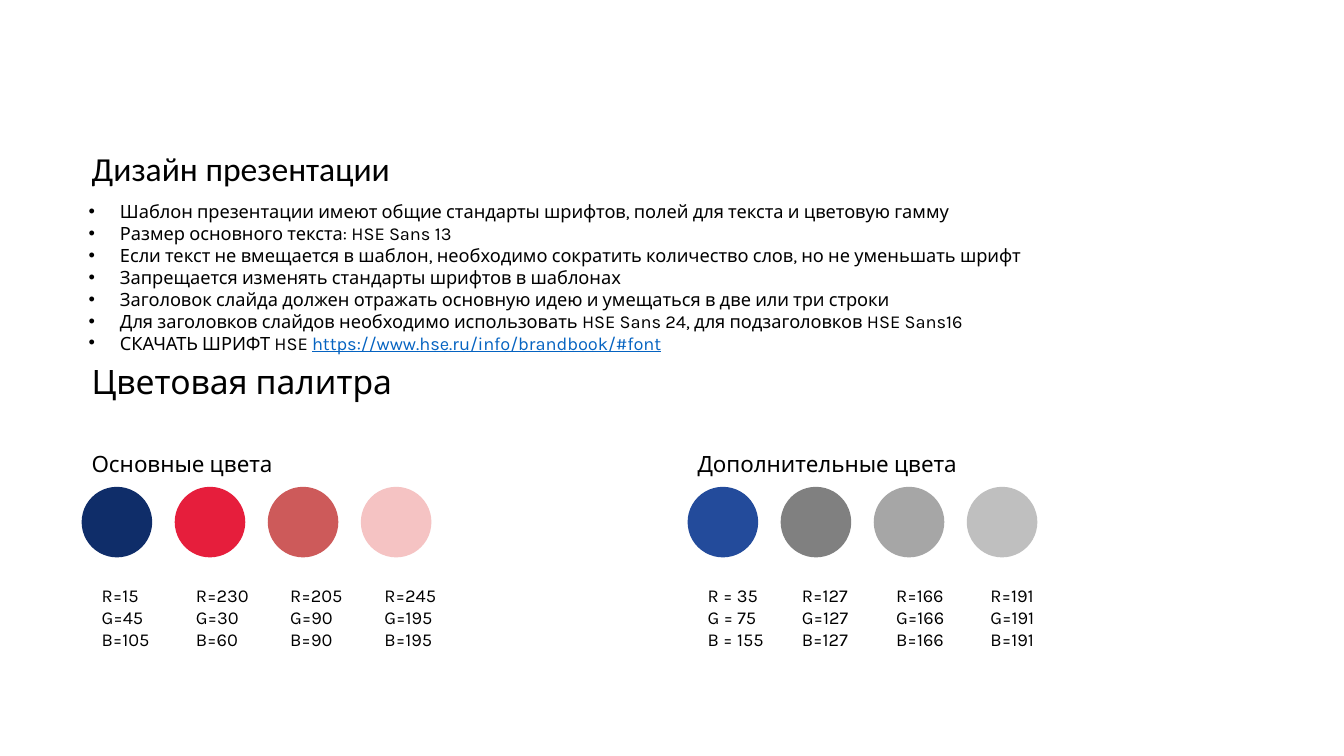
from dataclasses import dataclass

from pptx import Presentation
from pptx.dml.color import RGBColor
from pptx.enum.shapes import MSO_SHAPE
from pptx.enum.text import MSO_ANCHOR, MSO_AUTO_SIZE, PP_ALIGN
from pptx.oxml.ns import qn
from pptx.util import Inches, Pt
from lxml.etree import SubElement


@dataclass(frozen=True)
class Theme:
    title_font: str = "Calibri"
    text_font: str = "Karla"
    ink: str = "000000"
    link: str = "0563C1"
    heading_size: int = 24
    subheading_size: int = 16
    text_size: int = 13


THEME = Theme()
UNIT = Inches(0.1)
LEFT_COLUMN = 8.1
RIGHT_COLUMN = 68.2
SWATCH_PITCH = 9.23
CAPTION_PITCH = 9.35

FONT_LINK = "https://www.hse.ru/info/brandbook/#font"
GUIDELINES = [
    "Шаблон презентации имеют общие стандарты шрифтов, полей для текста и цветовую гамму",
    "Размер основного текста: HSE Sans 13",
    "Если текст не вмещается в шаблон, необходимо сократить количество слов, но не уменьшать шрифт",
    "Запрещается изменять стандарты шрифтов в шаблонах",
    "Заголовок слайда должен отражать основную идею и умещаться в две или три строки",
    "Для заголовков слайдов необходимо использовать HSE Sans 24, для подзаголовков HSE Sans16",
    "СКАЧАТЬ ШРИФТ HSE ",
]
MAIN_COLOURS = [
    ("0F2D69", ["R=15", "G=45", "B=105"]),
    ("E61E3C", ["R=230", "G=30", "B=60"]),
    ("CD5A5A", ["R=205", "G=90", "B=90"]),
    ("F5C3C3", ["R=245", "G=195", "B=195"]),
]
EXTRA_COLOURS = [
    ("234B9B", ["R = 35", "G = 75", "B = 155"]),
    ("808080", ["R=127", "G=127", "B=127"]),
    ("A6A6A6", ["R=166", "G=166", "B=166"]),
    ("BFBFBF", ["R=191", "G=191", "B=191"]),
]


def grid(*cells):
    return [round(cell * UNIT) for cell in cells]


def place(shape, area):
    shape.left, shape.top, shape.width, shape.height = grid(*area)


def write(shape, lines, size, font=THEME.text_font, bulleted=False):
    frame = shape.text_frame
    frame.word_wrap = True
    frame.auto_size = MSO_AUTO_SIZE.NONE
    frame.vertical_anchor = MSO_ANCHOR.TOP
    frame.text = "\n".join(lines)
    for paragraph in frame.paragraphs:
        if bulleted:
            add_bullet(paragraph)
        paragraph.alignment = PP_ALIGN.LEFT
        paragraph.space_before = Pt(0)
        paragraph.font.name = font
        paragraph.font.size = Pt(size)
        paragraph.font.color.rgb = RGBColor.from_string(THEME.ink)
    return frame


def add_bullet(paragraph):
    properties = paragraph._p.get_or_add_pPr()
    indent = Inches(0.31)
    properties.set("marL", str(indent))
    properties.set("indent", str(-indent))
    SubElement(properties, qn("a:buFont"), typeface="Arial")
    SubElement(properties, qn("a:buChar"), char="•")


def add_text(slide, area, lines, size):
    return write(slide.shapes.add_textbox(*grid(*area)), lines, size)


def add_title(slide):
    title = slide.shapes.title
    place(title, (LEFT_COLUMN, 14.2, 40.8, 5))
    write(title, ["Дизайн презентации"], THEME.heading_size, THEME.title_font)


def add_guidelines(slide):
    body = slide.placeholders[1]
    place(body, (7.8, 19.4, 108.4, 16.3))
    frame = write(body, GUIDELINES, THEME.text_size, bulleted=True)
    link = frame.paragraphs[-1].add_run()
    link.text = FONT_LINK
    link.font.underline = True
    link.font.color.rgb = RGBColor.from_string(THEME.link)


def add_swatch(slide, left, colour):
    swatch = slide.shapes.add_shape(MSO_SHAPE.OVAL, *grid(left, 48.3, 7, 7))
    swatch.shadow.inherit = False
    swatch.fill.solid()
    swatch.fill.fore_color.rgb = RGBColor.from_string(colour)
    swatch.line.fill.background()


def add_palette(slide, left, heading, colours):
    add_text(slide, (left, 44.2, 31.3, 3.7), [heading], THEME.subheading_size)
    for index, (colour, channels) in enumerate(colours):
        add_swatch(slide, left + index * SWATCH_PITCH, colour)
        caption_left = left + 1 + index * CAPTION_PITCH
        add_text(slide, (caption_left, 57.5, 8.5, 7.6), channels, THEME.text_size)


def main():
    presentation = Presentation()
    presentation.slide_width = Inches(13.33)
    presentation.slide_height = Inches(7.5)
    slide = presentation.slides.add_slide(presentation.slide_layouts[1])
    add_title(slide)
    add_guidelines(slide)
    heading = add_text(slide, (LEFT_COLUMN, 35.8, 34.7, 4.8), ["Цветовая палитра"], THEME.heading_size)
    heading.paragraphs[0].line_spacing = 0.9
    add_palette(slide, LEFT_COLUMN, "Основные цвета", MAIN_COLOURS)
    add_palette(slide, RIGHT_COLUMN, "Дополнительные цвета", EXTRA_COLOURS)
    presentation.save("out.pptx")


if __name__ == "__main__":
    main()
